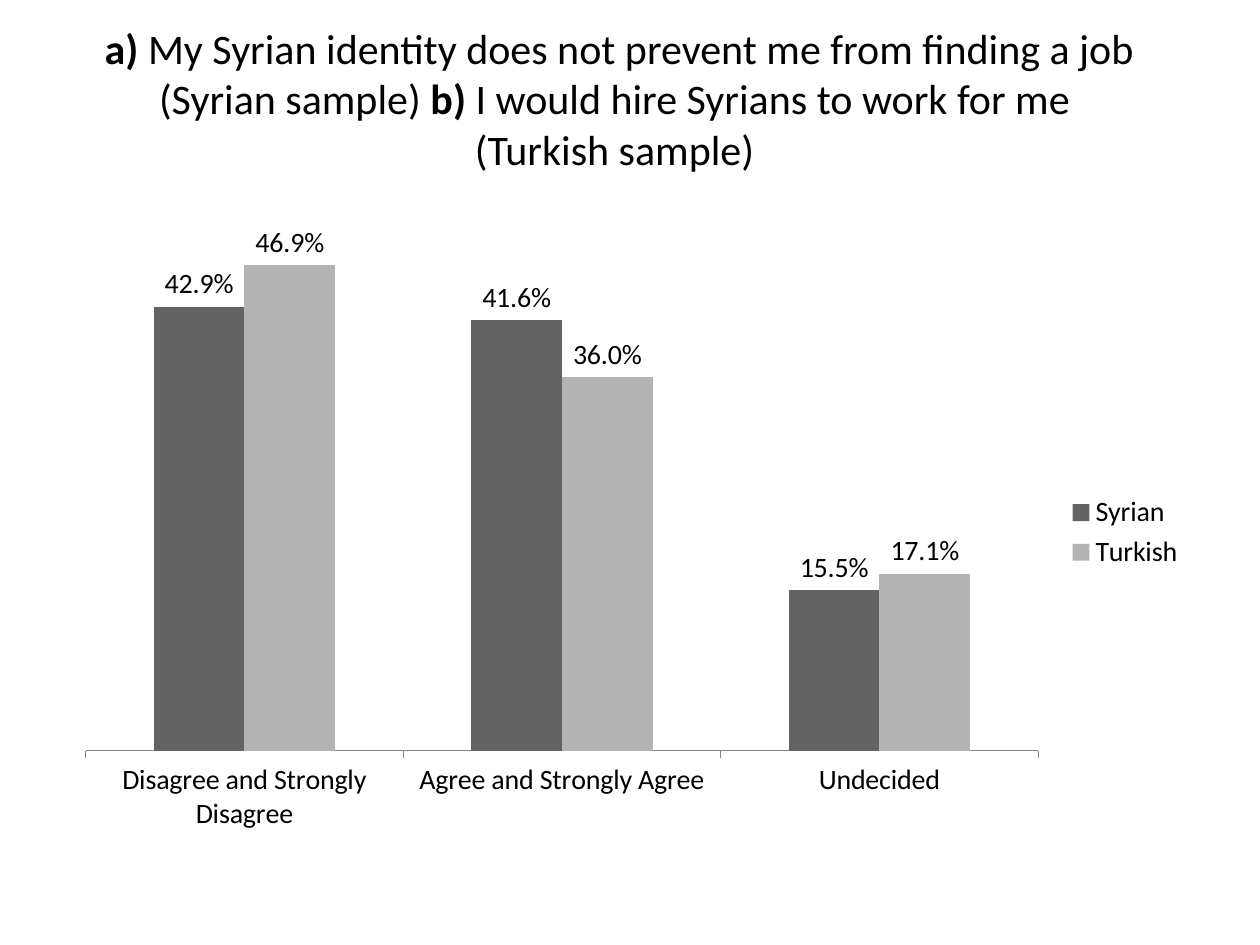
from dataclasses import dataclass
from typing import Any

from lxml.etree import SubElement
from pptx import Presentation
from pptx.chart.chart import Chart
from pptx.chart.data import CategoryChartData
from pptx.dml.color import RGBColor
from pptx.enum.chart import (XL_CHART_TYPE, XL_LABEL_POSITION,
                             XL_LEGEND_POSITION, XL_TICK_LABEL_POSITION,
                             XL_TICK_MARK)
from pptx.enum.text import PP_ALIGN
from pptx.oxml.ns import qn
from pptx.slide import Slide
from pptx.util import Cm, Pt


@dataclass(frozen=True)
class Theme:
    font: str = "Calibri"
    title_size: int = 24
    chart_size: int = 16
    text: RGBColor = RGBColor(0x00, 0x00, 0x00)
    axis: RGBColor = RGBColor(0x86, 0x86, 0x86)


@dataclass(frozen=True)
class Sample:
    name: str
    values: tuple[float, ...]
    color: RGBColor


@dataclass(frozen=True)
class TitleRun:
    text: str
    bold: bool = False


THEME = Theme()
ANSWERS = ("Disagree and Strongly Disagree", "Agree and Strongly Agree", "Undecided")
SAMPLES = (
    Sample("Syrian", (0.429, 0.416, 0.155), RGBColor(0x63, 0x63, 0x63)),
    Sample("Turkish", (0.469, 0.361, 0.171), RGBColor(0xB3, 0xB3, 0xB3)),
)
# Labels worded differently from the plotted value: (sample, answer) -> text
LABEL_TEXTS = {(1, 1): "36.0%"}
TITLE = (
    (
        TitleRun("a) ", True),
        TitleRun("My Syrian identity does not prevent me from finding a job (Syrian sample) "),
        TitleRun("b)", True),
        TitleRun(" I would hire Syrians to work for me "),
    ),
    (TitleRun("(Turkish sample) "),),
)
# Inner plot area as shares of the chart frame
PLOT_AREA = {"x": 0.02, "y": 0.02, "w": 0.84, "h": 0.83}


def apply_format(target: Any, values: dict[str, Any]) -> None:
    for name, value in values.items():
        setattr(target, name, value)


def style_font(font: Any, size: int, bold: bool = False) -> None:
    apply_format(font, {"name": THEME.font, "size": Pt(size), "bold": bold})
    font.color.rgb = THEME.text


def add_title(slide: Slide) -> None:
    shape = slide.shapes.add_textbox(Cm(0.89), Cm(0.33), Cm(23.19), Cm(3.33))
    frame = shape.text_frame
    frame.word_wrap = True
    for index, runs in enumerate(TITLE):
        paragraph = frame.add_paragraph() if index else frame.paragraphs[0]
        paragraph.alignment = PP_ALIGN.CENTER
        for part in runs:
            run = paragraph.add_run()
            run.text = part.text
            style_font(run.font, THEME.title_size, part.bold)


def place_plot_area(chart: Chart) -> None:
    plot_area = chart.plots[0]._element.getparent()
    for layout in plot_area.findall(qn("c:layout")):
        plot_area.remove(layout)
    layout = SubElement(plot_area, qn("c:layout"))
    plot_area.insert(0, layout)
    manual = SubElement(layout, qn("c:manualLayout"))
    settings = {"layoutTarget": "inner", "xMode": "edge", "yMode": "edge", **PLOT_AREA}
    for tag, value in settings.items():
        SubElement(manual, qn(f"c:{tag}")).set("val", str(value))


def style_series(series: Any, sample_index: int, sample: Sample) -> None:
    series.format.fill.solid()
    series.format.fill.fore_color.rgb = sample.color
    labels = series.data_labels
    apply_format(labels, {
        "show_value": True,
        "number_format": "0.0%",
        "number_format_is_linked": False,
        "position": XL_LABEL_POSITION.OUTSIDE_END,
    })
    style_font(labels.font, THEME.chart_size)
    for answer_index in range(len(ANSWERS)):
        text = LABEL_TEXTS.get((sample_index, answer_index))
        if text:
            label = series.points[answer_index].data_label
            run = label.text_frame.paragraphs[0].add_run()
            run.text = text
            style_font(run.font, THEME.chart_size)
            label.position = XL_LABEL_POSITION.OUTSIDE_END


def add_answer_chart(slide: Slide) -> None:
    data = CategoryChartData(number_format="0.0%")
    data.categories = ANSWERS
    for sample in SAMPLES:
        data.add_series(sample.name, sample.values)
    chart = slide.shapes.add_chart(
        XL_CHART_TYPE.COLUMN_CLUSTERED, Cm(1.27), Cm(4.45), Cm(22.86), Cm(12.57), data
    ).chart
    apply_format(chart, {"has_title": False, "has_legend": True})
    style_font(chart.font, THEME.chart_size)
    place_plot_area(chart)

    # Axes and legend
    apply_format(chart.value_axis, {
        "visible": False,
        "has_major_gridlines": False,
        "minimum_scale": 0,
        "maximum_scale": 0.5,
    })
    apply_format(chart.category_axis, {
        "major_tick_mark": XL_TICK_MARK.OUTSIDE,
        "tick_label_position": XL_TICK_LABEL_POSITION.NEXT_TO_AXIS,
    })
    style_font(chart.category_axis.tick_labels.font, THEME.chart_size)
    chart.category_axis.format.line.color.rgb = THEME.axis
    apply_format(chart.legend, {
        "position": XL_LEGEND_POSITION.RIGHT,
        "include_in_layout": False,
    })
    style_font(chart.legend.font, THEME.chart_size)

    # Columns
    plot = chart.plots[0]
    apply_format(plot, {"gap_width": 150, "overlap": 0, "vary_by_categories": False})
    for index, (series, sample) in enumerate(zip(plot.series, SAMPLES)):
        style_series(series, index, sample)


def main() -> None:
    presentation = Presentation()
    apply_format(presentation, {"slide_width": Cm(25.4), "slide_height": Cm(19.05)})
    slide = presentation.slides.add_slide(presentation.slide_layouts[6])
    add_answer_chart(slide)
    add_title(slide)
    presentation.save("out.pptx")


if __name__ == "__main__":
    main()
